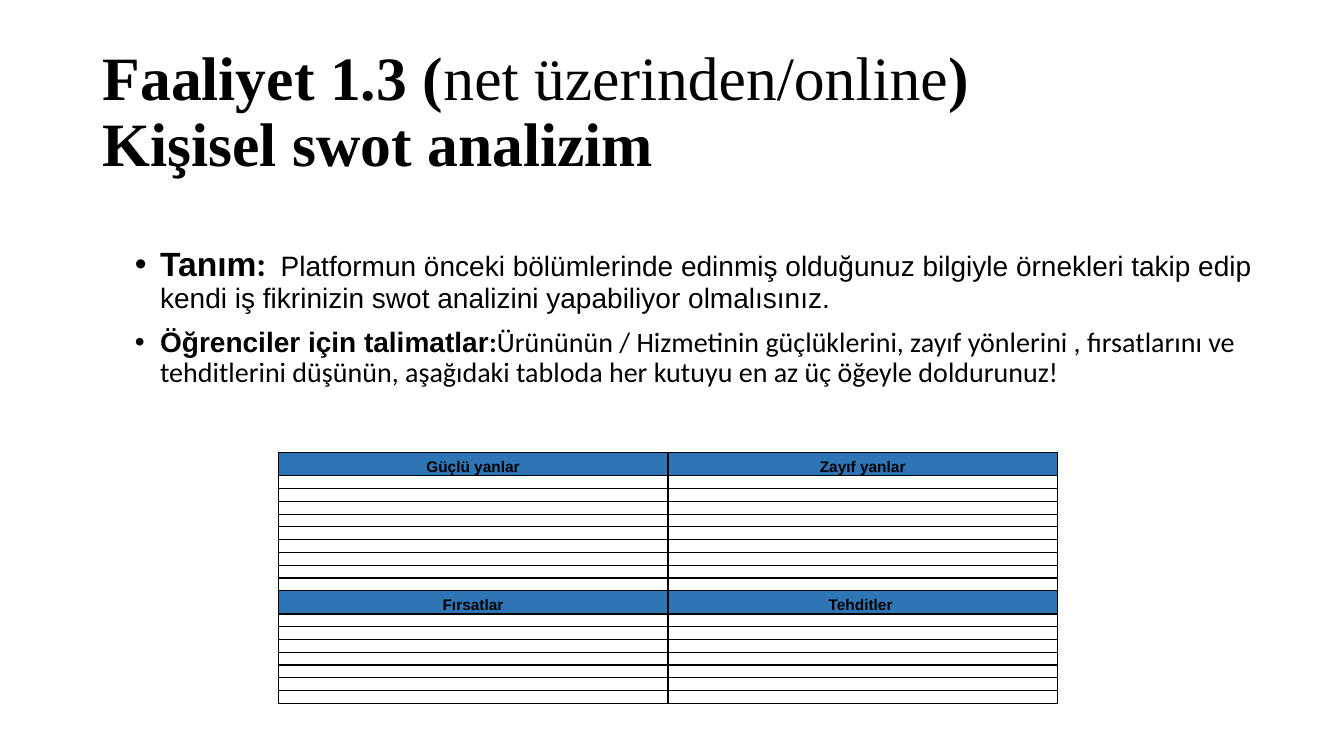
import dataclasses

import lxml.etree
import pptx
import pptx.dml.color
import pptx.enum.text
import pptx.oxml.ns
import pptx.util

Inches = pptx.util.Inches
Pt = pptx.util.Pt
qn = pptx.oxml.ns.qn
ANCHOR = pptx.enum.text.MSO_ANCHOR
ALIGN = pptx.enum.text.PP_ALIGN


@dataclasses.dataclass(frozen=True)
class Theme:
    ink: str = "000000"
    header_fill: str = "2E75B6"
    title_font: str = "Times New Roman"
    body_font: str = "Arial"
    detail_font: str = "Calibri"
    title_size: int = 44
    lead_size: int = 24
    body_size: int = 20
    gap_size: int = 16
    header_size: int = 11
    empty_row_size: int = 6
    border_width: int = 1


def rgb(code):
    return pptx.dml.color.RGBColor.from_string(code)


def add_span(para, text, *, font, size, color, bold=False, spacing=0):
    """Append a run; spacing is extra letter spacing in points."""
    span = para.add_run()
    span.text = text
    span.font.name = font
    span.font.size = Pt(size)
    span.font.bold = bold
    span.font.color.rgb = rgb(color)
    if spacing:
        span.font._element.set("spc", str(round(spacing * 100)))


class SlideBuilder:
    def __init__(self, slide, theme):
        self.slide = slide
        self.theme = theme

    def text_frame(self, left, top, width, height, anchor):
        box = self.slide.shapes.add_textbox(
            Inches(left), Inches(top), Inches(width), Inches(height))
        box.text_frame.word_wrap = True
        box.text_frame.vertical_anchor = anchor
        return box.text_frame

    def title(self, lines, *bounds):
        """Lines are lists of (text, bold) joined by line breaks."""
        para = self.text_frame(*bounds, ANCHOR.MIDDLE).paragraphs[0]
        para.line_spacing = 0.9
        for index, line in enumerate(lines):
            if index:
                para.add_line_break()
            for text, bold in line:
                add_span(para, text, font=self.theme.title_font,
                         size=self.theme.title_size, color=self.theme.ink, bold=bold)

    def bullets(self, items, *bounds):
        """Items are lists of (text, span format)."""
        frame = self.text_frame(*bounds, ANCHOR.TOP)
        for index, spans in enumerate(items):
            para = frame.add_paragraph() if index else frame.paragraphs[0]
            para.line_spacing = 0.9
            para.space_before = Pt(10)
            properties = para._p.get_or_add_pPr()
            properties.set("marL", str(Inches(0.25)))
            properties.set("indent", str(-Inches(0.25)))
            lxml.etree.SubElement(properties, qn("a:buFont"), typeface=self.theme.body_font)
            lxml.etree.SubElement(properties, qn("a:buChar"), char="•")
            for text, style in spans:
                add_span(para, text, color=self.theme.ink, **style)

    def borders(self, cell):
        properties = cell._tc.get_or_add_tcPr()
        for index, side in enumerate(("lnL", "lnR", "lnT", "lnB")):
            line = lxml.etree.Element(
                qn(f"a:{side}"), w=str(Pt(self.theme.border_width)))
            fill = lxml.etree.SubElement(line, qn("a:solidFill"))
            lxml.etree.SubElement(fill, qn("a:srgbClr"), val=self.theme.ink)
            properties.insert(index, line)

    def cell(self, cell, text):
        cell.margin_left = cell.margin_right = Inches(0.03)
        cell.margin_top = cell.margin_bottom = 0
        cell.vertical_anchor = ANCHOR.BOTTOM
        para = cell.text_frame.paragraphs[0]
        if text:
            cell.fill.solid()
            cell.fill.fore_color.rgb = rgb(self.theme.header_fill)
            para.alignment = ALIGN.CENTER
            para.line_spacing = 1.15
            add_span(para, text, font=self.theme.body_font,
                     size=self.theme.header_size, color=self.theme.ink, bold=True)
        else:
            cell.fill.background()
            lxml.etree.SubElement(para._p, qn("a:endParaRPr"),
                                  sz=str(self.theme.empty_row_size * 100))
        self.borders(cell)

    def swot_table(self, sections, left, top, width, height, header_height):
        """Sections are (headings, number of empty rows below them)."""
        rows = []
        for headings, empty_count in sections:
            rows += [headings] + [("", "")] * empty_count
        empty_height = ((height - header_height * len(sections))
                        / (len(rows) - len(sections)))
        table = self.slide.shapes.add_table(
            len(rows), 2, Inches(left), Inches(top), Inches(width), Inches(height)).table
        table.first_row = table.horz_banding = False
        for column in table.columns:
            column.width = Inches(width / 2)
        for row, texts in zip(table.rows, rows):
            row.height = Inches(header_height if any(texts) else empty_height)
            for cell, text in zip(row.cells, texts):
                self.cell(cell, text)


def main():
    deck = pptx.Presentation()
    deck.slide_width, deck.slide_height = Inches(13.33), Inches(7.5)
    theme = Theme()
    page = SlideBuilder(deck.slides.add_slide(deck.slide_layouts[6]), theme)

    page.title([
        [("Faaliyet 1.3 (", True), ("net üzerinden/online", False), (")", True)],
        [("Kişisel swot analizim", True)],
    ], 0.92, 0.4, 11.5, 1.45)

    body = dict(font=theme.body_font, size=theme.body_size)
    detail = dict(font=theme.detail_font, size=theme.body_size)
    lead = dict(size=theme.lead_size, bold=True)
    page.bullets([
        [("Tanım", dict(lead, font=theme.body_font)),
         (":", dict(lead, font=theme.detail_font)),
         (" ", dict(font=theme.detail_font, size=theme.gap_size, spacing=7)),
         ("Platformun önceki bölümlerinde edinmiş olduğunuz bilgiyle örnekleri takip "
          "edip kendi iş fikrinizin swot analizini yapabiliyor olmalısınız.", body)],
        [("Öğrenciler için talimatlar", dict(body, bold=True)),
         (":", dict(detail, bold=True)),
         ("Ürününün / Hizmetinin güçlüklerini, zayıf yönlerini , fırsatlarını ve "
          "tehditlerini düşünün, aşağıdaki tabloda her kutuyu en az üç öğeyle "
          "doldurunuz!", detail)],
    ], 1.24, 2.41, 11.5, 4.76)

    page.swot_table([
        (("Güçlü yanlar", "Zayıf yanlar"), 9),
        (("Fırsatlar", "Tehditler "), 7),
    ], 2.76, 4.49, 7.73, 2.49, header_height=0.23)

    deck.save("out.pptx")


if __name__ == "__main__":
    main()
